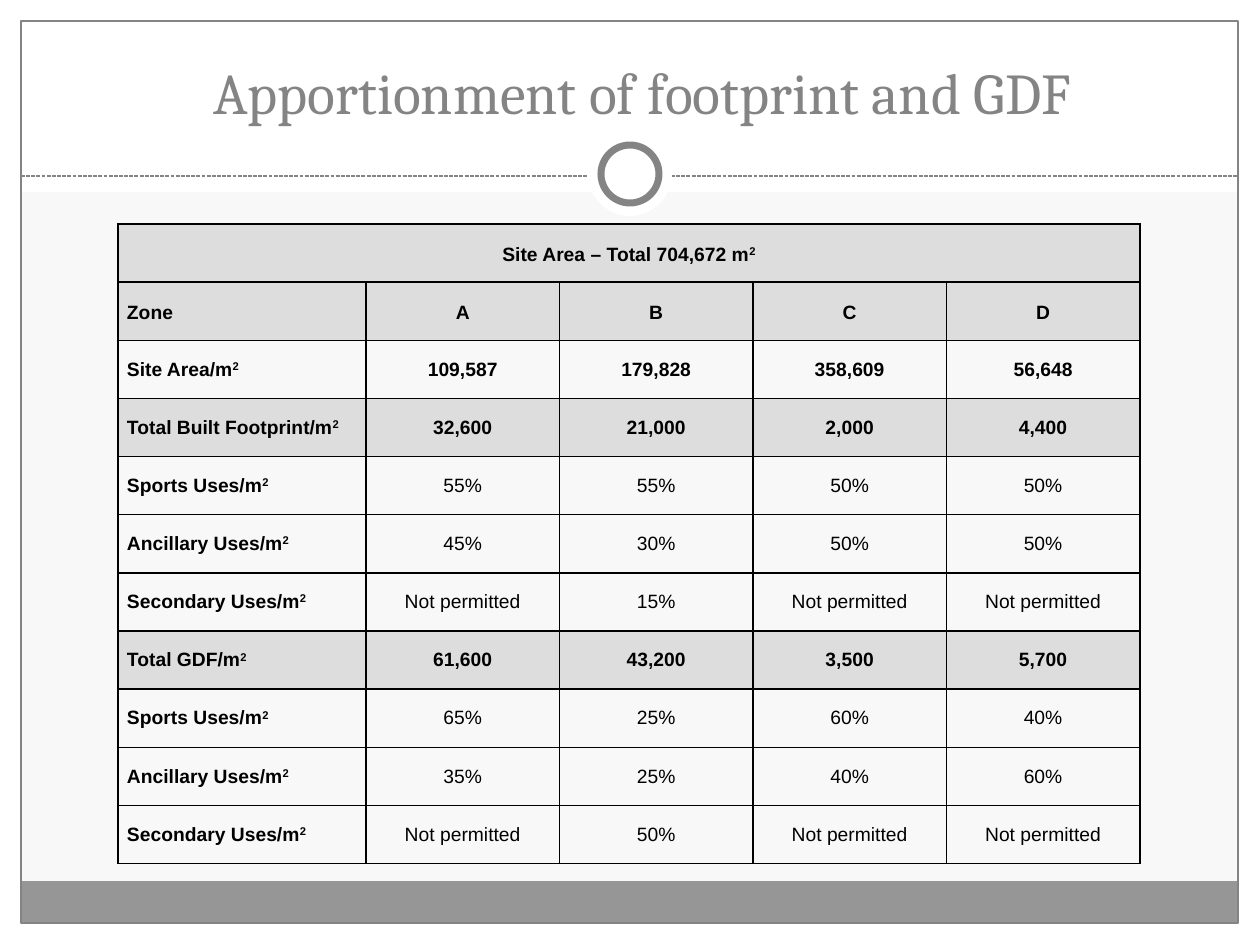
from typing import NamedTuple, Optional

import pptx
import pptx.util
from lxml import etree
from pptx.dml.color import RGBColor
from pptx.enum.dml import MSO_LINE
from pptx.enum.shapes import MSO_CONNECTOR, MSO_SHAPE
from pptx.enum.text import MSO_ANCHOR, PP_ALIGN
from pptx.oxml.ns import qn

EMU_PER_PX = 914400 / 126
WIDTH, HEIGHT = 1260, 945
COLORS = {"white": "FFFFFF", "back": "F8F8F8", "grey": "848484",
          "footer": "969696", "shade": "DDDDDD", "black": "000000"}


class Panel(NamedTuple):
    x: int
    y: int
    w: int
    h: int
    fill: Optional[str] = None
    line: Optional[str] = None
    line_pt: float = 0.75
    kind: MSO_SHAPE = MSO_SHAPE.RECTANGLE


class Row(NamedTuple):
    label: str
    values: tuple[str, ...] = ()
    shaded: bool = False
    bold: bool = False
    heading: bool = False


FRAME = [
    Panel(0, 924, WIDTH, 21, "white"),
    Panel(0, 0, WIDTH, 192, "white"),
    Panel(0, 0, 21, HEIGHT, "white"),
    Panel(1239, 0, 21, HEIGHT, "white"),
    Panel(21, 881, 1217, 43, "footer"),
    Panel(21, 21, 1217, 902, line="grey"),
]
RING = [
    Panel(588, 132, 84, 84, "white", kind=MSO_SHAPE.OVAL),
    Panel(601, 145, 58, 58, "white", "grey", 4, MSO_SHAPE.OVAL),
]
NO = "Not permitted"
ROWS = [
    Row("Site Area – Total 704,672 m²", (), True, True, True),
    Row("Zone", ("A", "B", "C", "D"), True, True, True),
    Row("Site Area/m²", ("109,587", "179,828", "358,609", "56,648"), bold=True),
    Row("Total Built Footprint/m²", ("32,600", "21,000", "2,000", "4,400"), True, True),
    Row("Sports Uses/m²", ("55%", "55%", "50%", "50%")),
    Row("Ancillary Uses/m²", ("45%", "30%", "50%", "50%")),
    Row("Secondary Uses/m²", (NO, "15%", NO, NO)),
    Row("Total GDF/m²", ("61,600", "43,200", "3,500", "5,700"), True, True),
    Row("Sports Uses/m²", ("65%", "25%", "60%", "40%")),
    Row("Ancillary Uses/m²", ("35%", "25%", "40%", "60%")),
    Row("Secondary Uses/m²", (NO, "50%", NO, NO)),
]
TABLE_X, TABLE_Y, TABLE_W, TABLE_H, LABEL_W = 118, 224, 1022, 640, 248


def px(n: int) -> int:
    return pptx.util.Emu(round(n * EMU_PER_PX))


def rgb(name: str) -> RGBColor:
    return RGBColor.from_string(COLORS[name])


def set_fill(fill, color: Optional[str]) -> None:
    if color:
        fill.solid()
        fill.fore_color.rgb = rgb(color)
    else:
        fill.background()


def set_font(font, name: str, size: int, color: str, bold: bool = False) -> None:
    font.name, font.size, font.bold = name, pptx.util.Pt(size), bold
    font.color.rgb = rgb(color)


def add_panel(s, panel: Panel) -> None:
    sp = s.shapes.add_shape(panel.kind, px(panel.x), px(panel.y), px(panel.w), px(panel.h))
    sp.shadow.inherit = False
    set_fill(sp.fill, panel.fill)
    set_fill(sp.line.fill, panel.line)
    if panel.line:
        sp.line.width = pptx.util.Pt(panel.line_pt)


def add_divider(s, x1: int, x2: int, y: int) -> None:
    cn = s.shapes.add_connector(MSO_CONNECTOR.STRAIGHT, px(x1), px(y), px(x2), px(y))
    cn.line.color.rgb = rgb("grey")
    cn.line.width = pptx.util.Pt(0.75)
    cn.line.dash_style = MSO_LINE.SQUARE_DOT
    etree.SubElement(cn._element.spPr, qn("a:effectLst"))


def add_borders(cell) -> None:
    tc_pr = cell._tc.get_or_add_tcPr()
    for side in ("lnL", "lnR", "lnT", "lnB"):
        ln = etree.SubElement(tc_pr, qn(f"a:{side}"), w="12700")
        solid = etree.SubElement(ln, qn("a:solidFill"))
        etree.SubElement(solid, qn("a:srgbClr"), val=COLORS["black"])


def fill_cell(cell, text: str, row: Row, bold: bool, centred: bool) -> None:
    add_borders(cell)
    set_fill(cell.fill, "shade" if row.shaded else None)
    cell.vertical_anchor = MSO_ANCHOR.MIDDLE
    cell.margin_left = cell.margin_right = px(9)
    cell.margin_top = cell.margin_bottom = 0
    p = cell.text_frame.paragraphs[0]
    p.alignment = PP_ALIGN.CENTER if centred else PP_ALIGN.LEFT
    p.space_before = pptx.util.Pt(12 if row.heading else 6)
    if row.values:
        p.space_after = p.space_before
    if row.heading:
        p.line_spacing = 1.15
    set_font(p.font, "Arial", 11, "black", bold)
    # The square sign is set as a raised 2
    base, square, _ = text.partition("²")
    if base:
        p.add_run().text = base
    if square:
        r = p.add_run()
        r.text = "2"
        r._r.get_or_add_rPr().set("baseline", "30000")


def add_zone_table(s) -> None:
    n_cols = 1 + len(ROWS[1].values)
    table = s.shapes.add_table(len(ROWS), n_cols, px(TABLE_X), px(TABLE_Y),
                               px(TABLE_W), px(TABLE_H)).table
    table.first_row = table.horz_banding = False
    for i, column in enumerate(table.columns):
        column.width = px(LABEL_W) if i == 0 else px(TABLE_W - LABEL_W) // (n_cols - 1)
    for i, row in enumerate(ROWS):
        table.rows[i].height = px(TABLE_H) // len(ROWS)
        texts = (row.label, *row.values) if row.values else (row.label,) + ("",) * (n_cols - 1)
        for j, text in enumerate(texts):
            fill_cell(table.cell(i, j), text, row, row.bold or j == 0, j > 0 or not row.values)
    table.cell(0, 0).merge(table.cell(0, n_cols - 1))


def add_title(s, text: str) -> None:
    tf = s.shapes.add_textbox(px(54), px(28), px(1176), px(104)).text_frame
    tf.word_wrap = True
    tf.vertical_anchor = MSO_ANCHOR.BOTTOM
    p = tf.paragraphs[0]
    p.text = text
    p.alignment = PP_ALIGN.CENTER
    set_font(p.font, "Cambria", 33, "grey")


def main() -> None:
    prs = pptx.Presentation()
    prs.slide_width, prs.slide_height = px(WIDTH), px(HEIGHT)
    s = prs.slides.add_slide(prs.slide_layouts[6])
    set_fill(s.background.fill, "back")

    # Frame, divider and ring
    for panel in FRAME:
        add_panel(s, panel)
    add_divider(s, 21, 1239, 176)
    for panel in RING:
        add_panel(s, panel)

    # Content
    add_zone_table(s)
    add_title(s, "Apportionment of footprint and GDF")
    prs.save("out.pptx")


if __name__ == "__main__":
    main()
